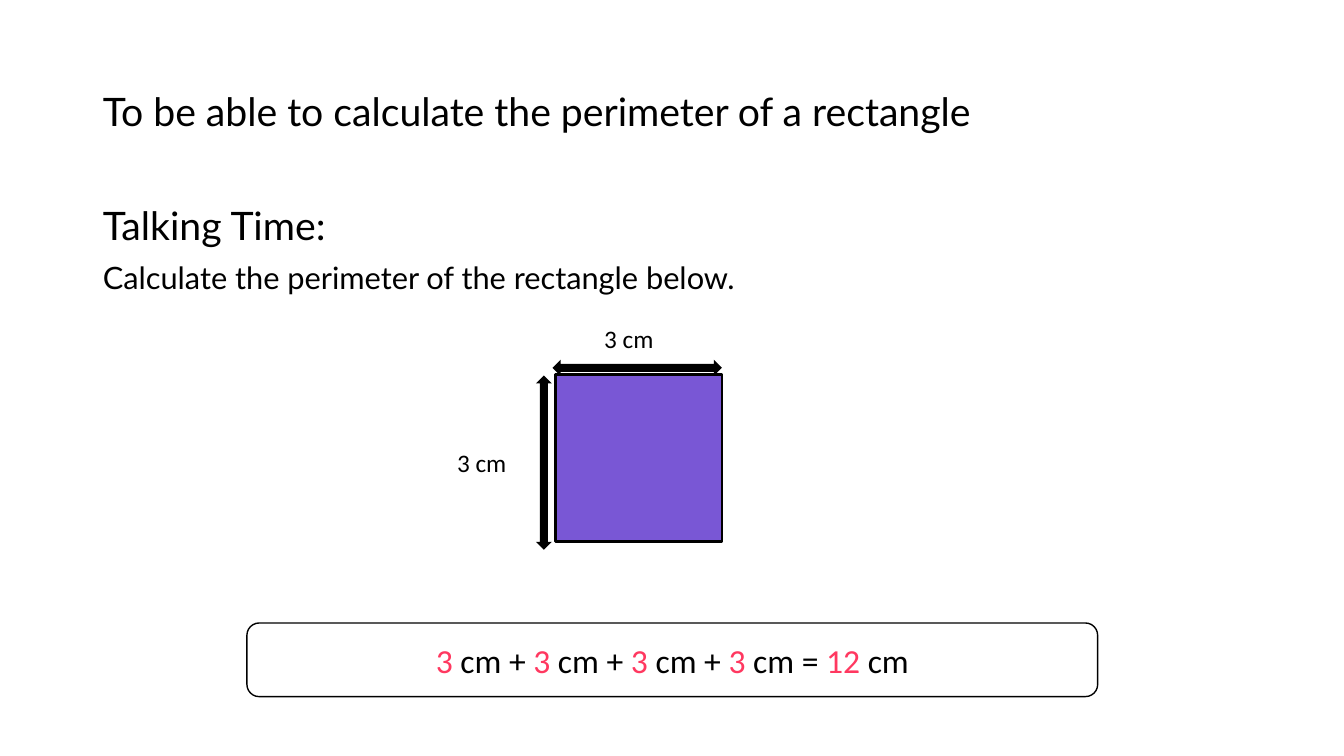
from lxml import etree
from pptx import Presentation
from pptx.dml.color import RGBColor
from pptx.enum.shapes import MSO_SHAPE
from pptx.enum.text import MSO_ANCHOR, MSO_AUTO_SIZE, PP_ALIGN
from pptx.oxml.ns import qn
from pptx.util import Pt

RECTANGLE, ROUNDED = MSO_SHAPE.RECTANGLE, MSO_SHAPE.ROUNDED_RECTANGLE
DOUBLE_ARROW = MSO_SHAPE.LEFT_RIGHT_ARROW
TOP, MIDDLE = MSO_ANCHOR.TOP, MSO_ANCHOR.MIDDLE
LEFT, CENTER = PP_ALIGN.LEFT, PP_ALIGN.CENTER
NO_FIT, GROW = MSO_AUTO_SIZE.NONE, MSO_AUTO_SIZE.SHAPE_TO_FIT_TEXT

BLACK, WHITE, PURPLE, PINK = "000000", "FFFFFF", "7957D5", "FF3860"

# Content
OBJECTIVE = "To be able to calculate the perimeter of a rectangle"
TASK = [("Talking Time:", 28), ("Calculate the perimeter of the rectangle below.", 22)]
# Side label: text, left, top, width
SIDE_LABELS = [("3 cm", 319.5, 316, 61.5), ("3 cm", 424.5, 227.5, 62)]
SUM = [("3", " cm + "), ("3", " cm + "), ("3", " cm + "), ("3", " cm = "), ("12", " cm")]

# Geometry: left, top, width, height
OBJECTIVE_BOX = (66.24, 28.8, 691.2, 104.4)
TASK_BOX = (66.24, 144, 828, 342.72)
SQUARE = (396.9, 267.8, 118.8, 118.8)
TOP_ARROW = (394.6, 257, 121, 11.5)
SIDE_ARROW = (326.2, 324.7, 124.6, 11.5)
ANSWER_BOX = (176.4, 445, 607.7, 52.6)


def color(hex_code):
    return RGBColor.from_string(hex_code)


def points(box):
    return [Pt(value) for value in box]


def add_run(paragraph, text, size, font, hex_code=BLACK):
    run = paragraph.add_run()
    run.text = text
    run.font.size = Pt(size)
    run.font.name = font
    run.font.color.rgb = color(hex_code)


def place(placeholder, box, anchor):
    placeholder.left, placeholder.top, placeholder.width, placeholder.height = points(box)
    frame = placeholder.text_frame
    frame.auto_size = NO_FIT
    frame.vertical_anchor = anchor
    return frame


def add_block(preset, box, fill, line_width=0, rotation=0):
    block = slide.shapes.add_shape(preset, *points(box))
    block.shadow.inherit = False
    block.rotation = rotation
    block.fill.solid()
    block.fill.fore_color.rgb = color(fill)
    if line_width:
        block.line.color.rgb = color(BLACK)
        block.line.width = Pt(line_width)
    else:
        block.line.fill.background()
    return block


prs = Presentation()
prs.slide_width, prs.slide_height = Pt(960), Pt(540)
slide = prs.slides.add_slide(prs.slide_layouts[1])

# Learning objective
objective = place(slide.shapes.title, OBJECTIVE_BOX, MIDDLE).paragraphs[0]
objective.alignment = LEFT
objective.line_spacing = 0.9
add_run(objective, OBJECTIVE, 28, "Lato")

# Task
task = place(slide.placeholders[1], TASK_BOX, TOP)
for i, (text, size) in enumerate(TASK):
    line = task.add_paragraph() if i else task.paragraphs[0]
    properties = line._p.get_or_add_pPr()
    properties.set("marL", "0")
    properties.set("indent", "0")
    etree.SubElement(properties, qn("a:buNone"))
    line.line_spacing = 0.9
    line.space_before = Pt(10 if i else 0)
    add_run(line, text, size, "Lato")

# Square with its two measuring arrows
add_block(RECTANGLE, SQUARE, PURPLE, 2)
add_block(DOUBLE_ARROW, TOP_ARROW, BLACK)
add_block(DOUBLE_ARROW, SIDE_ARROW, BLACK, rotation=90)

# Side labels
for text, left, top, width in SIDE_LABELS:
    label = slide.shapes.add_textbox(*points((left, top, width, 29))).text_frame
    label.word_wrap = False
    label.auto_size = GROW
    add_run(label.paragraphs[0], text, 18, "Calibri")

# Answer
answer = add_block(ROUNDED, ANSWER_BOX, WHITE, 1).text_frame
answer.vertical_anchor = MIDDLE
addition = answer.paragraphs[0]
addition.alignment = CENTER
for number, unit in SUM:
    add_run(addition, number, 24, "Calibri", PINK)
    add_run(addition, unit, 24, "Calibri")

prs.save("out.pptx")
